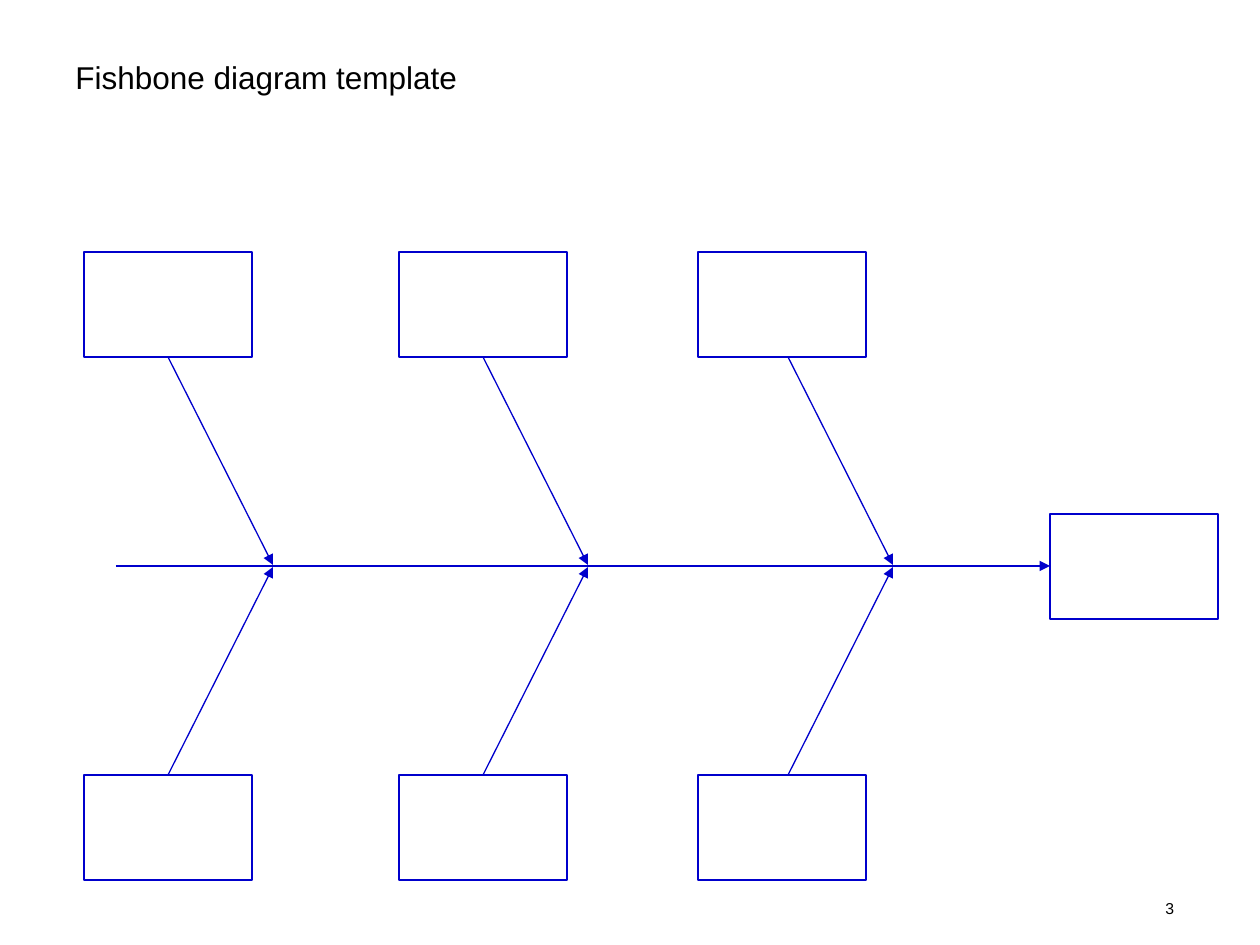
from lxml import etree
from pptx import Presentation
from pptx.dml.color import RGBColor
from pptx.enum.shapes import MSO_CONNECTOR, MSO_SHAPE
from pptx.enum.text import MSO_ANCHOR
from pptx.oxml.ns import qn
from pptx.util import Pt

RECT = MSO_SHAPE.RECTANGLE
STRAIGHT = MSO_CONNECTOR.STRAIGHT
MIDDLE = MSO_ANCHOR.MIDDLE
BLUE = RGBColor(0x00, 0x00, 0xCC)
BLACK = RGBColor(0x00, 0x00, 0x00)
FONT = "Arial"
SCALE = 914400 / 126
BOX_W, BOX_H = 168, 105
TOP, BOTTOM = 252, 775
SPINE = 566
REACH = 105
BONES = [(84, 168), (399, 483), (698, 788)]


def px(*sizes):
    return [round(size * SCALE) for size in sizes]


def add_text(slide, text, size, area, wrap):
    frame = slide.shapes.add_textbox(*px(*area)).text_frame
    frame.word_wrap = wrap
    frame.vertical_anchor = MIDDLE
    frame.text = text
    font = frame.paragraphs[0].runs[0].font
    font.name = FONT
    font.size = Pt(size)
    font.color.rgb = BLACK


def add_box(slide, left, top):
    box = slide.shapes.add_shape(RECT, *px(left, top, BOX_W, BOX_H))
    box.shadow.inherit = False
    box.fill.background()
    box.line.color.rgb = BLUE
    box.line.width = Pt(1.5)


def add_arrow(slide, start, end, width):
    arrow = slide.shapes.add_connector(STRAIGHT, *px(*start, *end))
    arrow.line.color.rgb = BLUE
    arrow.line.width = Pt(width)
    props = arrow._element.spPr
    etree.SubElement(props.find(qn("a:ln")), qn("a:tailEnd"), type="triangle")
    etree.SubElement(props, qn("a:effectLst"))


def main():
    deck = Presentation()
    deck.slide_width, deck.slide_height = px(1260, 945)
    slide = deck.slides.add_slide(deck.slide_layouts[6])

    add_text(slide, "Fishbone diagram template", 18, (63, 38, 1134, 78), True)
    add_text(slide, "3", 9, (1153, 892, 44, 32), False)

    add_box(slide, 1050, 514)
    add_arrow(slide, (116, SPINE), (1050, SPINE), 1)
    for left, root in BONES:
        add_box(slide, left, TOP)
        add_box(slide, left, BOTTOM)
        tip = root + REACH
        add_arrow(slide, (root, TOP + BOX_H), (tip, SPINE - 1), 0.75)
        add_arrow(slide, (root, BOTTOM), (tip, SPINE + 1), 0.75)

    deck.save("out.pptx")


if __name__ == "__main__":
    main()
